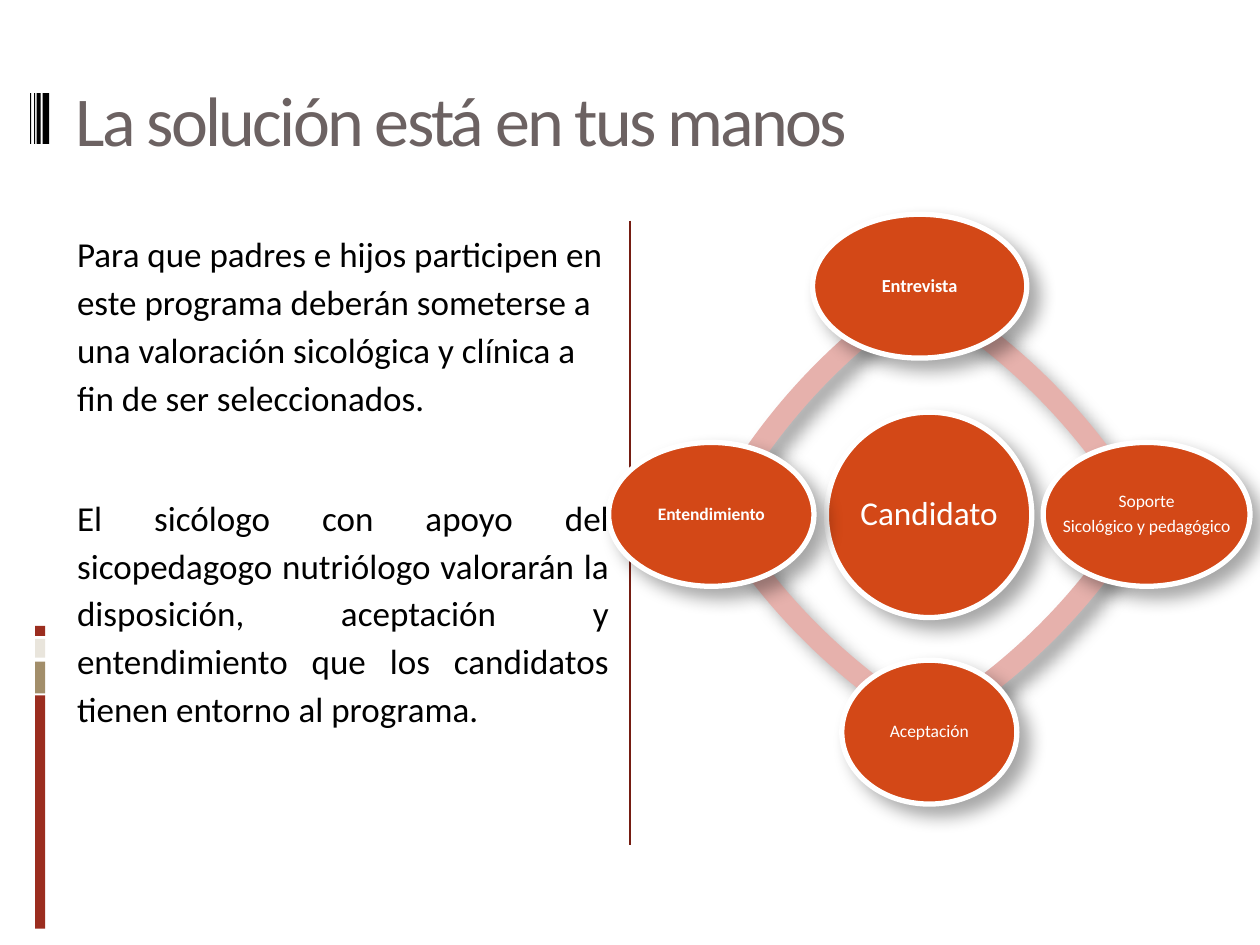
from lxml.etree import SubElement
from pptx import Presentation
from pptx.dml.color import RGBColor
from pptx.enum.shapes import MSO_CONNECTOR as CONN, MSO_SHAPE as SHAPE
from pptx.enum.text import MSO_ANCHOR as ANCHOR, MSO_AUTO_SIZE as AUTO, PP_ALIGN as ALIGN
from pptx.oxml.ns import qn
from pptx.util import Cm, Pt

COLORS = {
    "red": "9B2D1F", "tan": "A28E6A", "cream": "E9E5DC", "black": "000000",
    "divider": "751D12", "title": "6C6262", "ring": "E6B1AC",
    "node": "D34817", "white": "FFFFFF",
}
TITLE = "La solución está en tus manos"
BODY = [
    ("Para que padres e hijos participen en este programa deberán someterse a "
     "una valoración sicológica y clínica a fin de ser seleccionados.", ALIGN.LEFT, 7),
    ("El sicólogo con apoyo del sicopedagogo nutriólogo valorarán la disposición, "
     "aceptación y entendimiento que los candidatos tienen entorno al programa.",
     ALIGN.JUSTIFY, 41),
]
BARS = [(14.02, 4.7, "red"), (13.34, 0.64, "tan"), (12.88, 0.38, "cream"), (12.62, 0.2, "red")]
TICKS = [(0.86, 0.13), (0.74, 0.08), (0.69, 0.02), (0.61, 0.02)]
ARC_SIZE = 25.17
ARCS = [
    (12.78, 3.63, 207.97, 236.87),
    (12.5, -8.59, 120.62, 149.38),
    (-0.23, -8.59, 30.62, 59.38),
    (-0.3, 3.99, 300.14, 330.24),
]
NODES = [
    (["Candidato"], (16.66, 8.31, 4.14, 4.14), 19, False),
    (["Entrevista"], (16.38, 4.32, 4.32, 2.9), 10.5, True),
    (["Soporte", "Sicológico y pedagógico"], (21.03, 8.92, 4.17, 2.9), 10, False),
    (["Aceptación"], (16.97, 13.31, 3.53, 2.9), 10, False),
    (["Entendimiento"], (12.27, 8.92, 4.14, 2.9), 10, True),
]
SHADOW = {"blurRad": Pt(10.2), "dist": Pt(8), "dir": 45 * 60000, "algn": "tl", "rotWithShape": 0}


def rgb(name):
    return RGBColor.from_string(COLORS[name])


def apply(obj, **fmt):
    for key, value in fmt.items():
        setattr(obj, key, value)


def place(sp, left, top, width, height):
    apply(sp, left=Cm(left), top=Cm(top), width=Cm(width), height=Cm(height))


def write(p, text, size, color, bold=False, **fmt):
    apply(p, **fmt)
    r = p.add_run()
    r.text = text
    apply(r.font, name="Calibri", size=Pt(size), bold=bold)
    r.font.color.rgb = rgb(color)
    return r


def paragraphs(tf, items):
    for i, item in enumerate(items):
        yield (tf.add_paragraph() if i else tf.paragraphs[0]), item


def add_shape(s, kind, box, fill):
    sp = s.shapes.add_shape(kind, *map(Cm, box))
    sp.shadow.inherit = False
    sp.fill.solid()
    sp.fill.fore_color.rgb = rgb(fill)
    sp.line.fill.background()
    return sp


def add_shadow(sp):
    effects = sp._element.spPr.find(qn("a:effectLst"))
    outer = SubElement(effects, qn("a:outerShdw"), {k: str(v) for k, v in SHADOW.items()})
    color = SubElement(outer, qn("a:srgbClr"), val=COLORS["black"])
    SubElement(color, qn("a:alpha"), val="35000")


def add_text(s):
    title, body = s.placeholders
    place(title, 1.27, 0.58, 22.86, 3.61)
    tf = title.text_frame
    apply(tf, vertical_anchor=ANCHOR.MIDDLE, word_wrap=True, auto_size=AUTO.NONE)
    r = write(tf.paragraphs[0], TITLE, 40, "title", alignment=ALIGN.LEFT)
    r._r.get_or_add_rPr().set("spc", "-150")

    place(body, 1.3, 4.45, 11.23, 12.57)
    tf = body.text_frame
    apply(tf, vertical_anchor=ANCHOR.TOP, word_wrap=True, auto_size=AUTO.NONE)
    for p, (text, align, before) in paragraphs(tf, BODY):
        write(p, text, 20, "black", alignment=align, line_spacing=1.14, space_before=Pt(before))
        pPr = p._p.get_or_add_pPr()
        apply_xml = {"marL": "0", "indent": "0"}
        for key, value in apply_xml.items():
            pPr.set(key, value)
        SubElement(pPr, qn("a:buNone"))


def add_decoration(s):
    for top, height, color in BARS:
        add_shape(s, SHAPE.RECTANGLE, (0.71, top, 0.2, height), color)
    for left, width in TICKS:
        add_shape(s, SHAPE.RECTANGLE, (left, 1.88, width, 1.02), "black")
    line = s.shapes.add_connector(CONN.STRAIGHT, Cm(12.7), Cm(4.45), Cm(12.7), Cm(17.04))
    line.line.width = Pt(0.75)
    line.line.color.rgb = rgb("divider")
    SubElement(line._element.spPr, qn("a:effectLst"))


def add_cycle(s):
    for left, top, start, end in ARCS:
        sp = add_shape(s, SHAPE.BLOCK_ARC, (left, top, ARC_SIZE, ARC_SIZE), "ring")
        for i, value in enumerate((start * 0.6, end * 0.6, 0.017)):
            sp.adjustments[i] = value
        add_shadow(sp)
    for lines, box, size, bold in NODES:
        sp = add_shape(s, SHAPE.OVAL, box, "node")
        sp.line.color.rgb = rgb("white")
        sp.line.width = Pt(3)
        add_shadow(sp)
        tf = sp.text_frame
        apply(tf, word_wrap=False, vertical_anchor=ANCHOR.MIDDLE,
              margin_left=0, margin_right=0, margin_top=0, margin_bottom=0)
        for p, text in paragraphs(tf, lines):
            write(p, text, size, "white", bold, alignment=ALIGN.CENTER,
                  line_spacing=0.9, space_after=Pt(size * 0.35))


def main():
    prs = Presentation()
    apply(prs, slide_width=Cm(25.4), slide_height=Cm(19.05))
    s = prs.slides.add_slide(prs.slide_layouts[1])
    add_text(s)
    add_decoration(s)
    add_cycle(s)
    prs.save("out.pptx")


if __name__ == "__main__":
    main()
